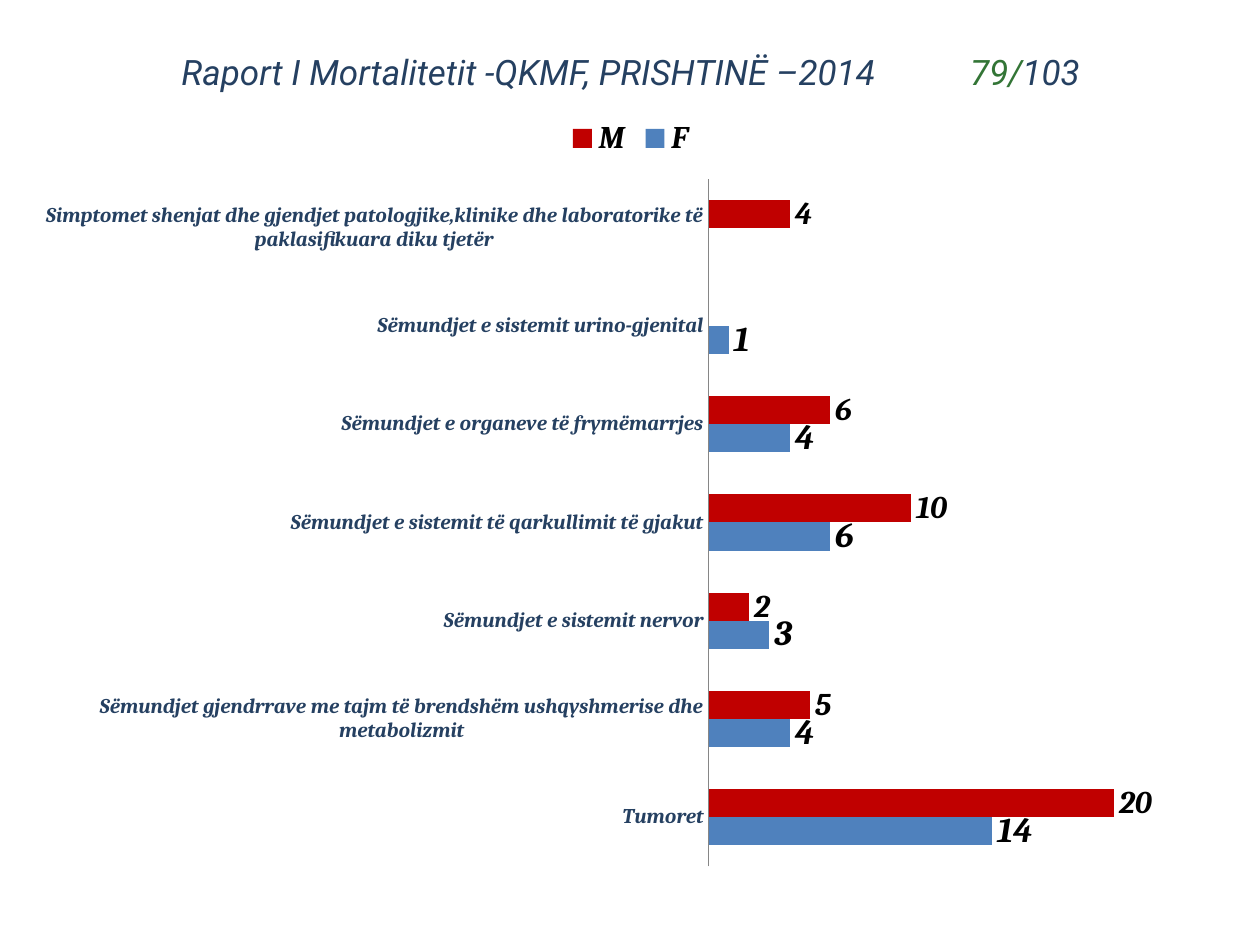
from lxml import etree
from pptx import Presentation
from pptx.chart.data import CategoryChartData
from pptx.dml.color import RGBColor
from pptx.enum.chart import XL_CHART_TYPE, XL_LABEL_POSITION, XL_LEGEND_POSITION, XL_TICK_MARK
from pptx.enum.text import MSO_ANCHOR, PP_ALIGN
from pptx.oxml.ns import qn
from pptx.util import Inches, Pt

BARS = XL_CHART_TYPE.BAR_CLUSTERED
OUTSIDE = XL_LABEL_POSITION.OUTSIDE_END
LEGEND_TOP = XL_LEGEND_POSITION.TOP
NO_TICK = XL_TICK_MARK.NONE
LEFT = PP_ALIGN.LEFT
MIDDLE = MSO_ANCHOR.MIDDLE

NAVY = RGBColor(0x25, 0x40, 0x61)
GREEN = RGBColor(0x33, 0x75, 0x36)
BLUE = RGBColor(0x4F, 0x81, 0xBD)
RED = RGBColor(0xC0, 0x00, 0x00)
BLACK = RGBColor(0, 0, 0)
GREY = RGBColor(0x86, 0x86, 0x86)


def style_font(font, name, size, color, bold=True):
    font.name = name
    font.size = Pt(size)
    font.bold = bold
    font.italic = True
    font.color.rgb = color


prs = Presentation()
prs.slide_width = Inches(10)
prs.slide_height = Inches(7.5)
slide = prs.slides.add_slide(prs.slide_layouts[5])

# Title, with the figures set apart by a tab stop
title = slide.shapes.title
title.left, title.top = Inches(0.5), Inches(0.3)
title.width, title.height = Inches(9), Inches(0.53)
heading = title.text_frame
heading.vertical_anchor = MIDDLE
heading.margin_left = Inches(0.94)
heading_line = heading.paragraphs[0]
heading_line.alignment = LEFT
tab_stops = etree.SubElement(heading_line._p.get_or_add_pPr(), qn("a:tabLst"))
etree.SubElement(tab_stops, qn("a:tab"), pos=str(Inches(6.26)), algn="l")
for words, color in [
    ("Raport I Mortalitetit -QKMF, PRISHTINË –2014\t", NAVY),
    ("79/", GREEN),
    ("103", NAVY),
]:
    run = heading_line.add_run()
    run.text = words
    style_font(run.font, "Roboto", 20, color, bold=False)

# Bar chart: category, F, M
rows = [
    ("Tumoret", 14, 20),
    ("Sëmundjet gjendrrave me tajm të brendshëm ushqyshmerise dhe metabolizmit", 4, 5),
    ("Sëmundjet e sistemit nervor", 3, 2),
    ("Sëmundjet e sistemit të qarkullimit të gjakut", 6, 10),
    ("Sëmundjet e organeve të frymëmarrjes", 4, 6),
    ("Sëmundjet e sistemit urino-gjenital", 1, None),
    ("Simptomet shenjat dhe gjendjet patologjike,klinike dhe laboratorike të "
     "paklasifikuara diku tjetër", None, 4),
]
diseases, f_values, m_values = zip(*rows)
chart_data = CategoryChartData()
chart_data.categories = diseases
chart_data.add_series("F", f_values)
chart_data.add_series("M", m_values)
chart = slide.shapes.add_chart(
    BARS, Inches(0.17), Inches(0.83), Inches(9.67), Inches(6.17), chart_data
).chart
chart.has_title = False
chart.font.name = "Calibri"
chart.font.size = Pt(10)
chart.font.color.rgb = BLACK

chart.has_legend = True
chart.legend.position = LEGEND_TOP
chart.legend.include_in_layout = False
style_font(chart.legend.font, "Cambria", 18, BLACK)

disease_axis = chart.category_axis
disease_axis.major_tick_mark = NO_TICK
disease_axis.format.line.color.rgb = GREY
style_font(disease_axis.tick_labels.font, "Cambria", 12, NAVY)

value_axis = chart.value_axis
value_axis.visible = False
value_axis.has_major_gridlines = False
value_axis.minimum_scale = 0
value_axis.maximum_scale = 25

plot = chart.plots[0]
plot.gap_width = 150
plot.overlap = 0
plot.vary_by_categories = False
for series, color, label_size in zip(plot.series, (BLUE, RED), (20, 18)):
    series.format.fill.solid()
    series.format.fill.fore_color.rgb = color
    series.invert_if_negative = False
    labels = series.data_labels
    labels.show_value = True
    labels.position = OUTSIDE
    style_font(labels.font, "Cambria", label_size, BLACK)

prs.save("out.pptx")
